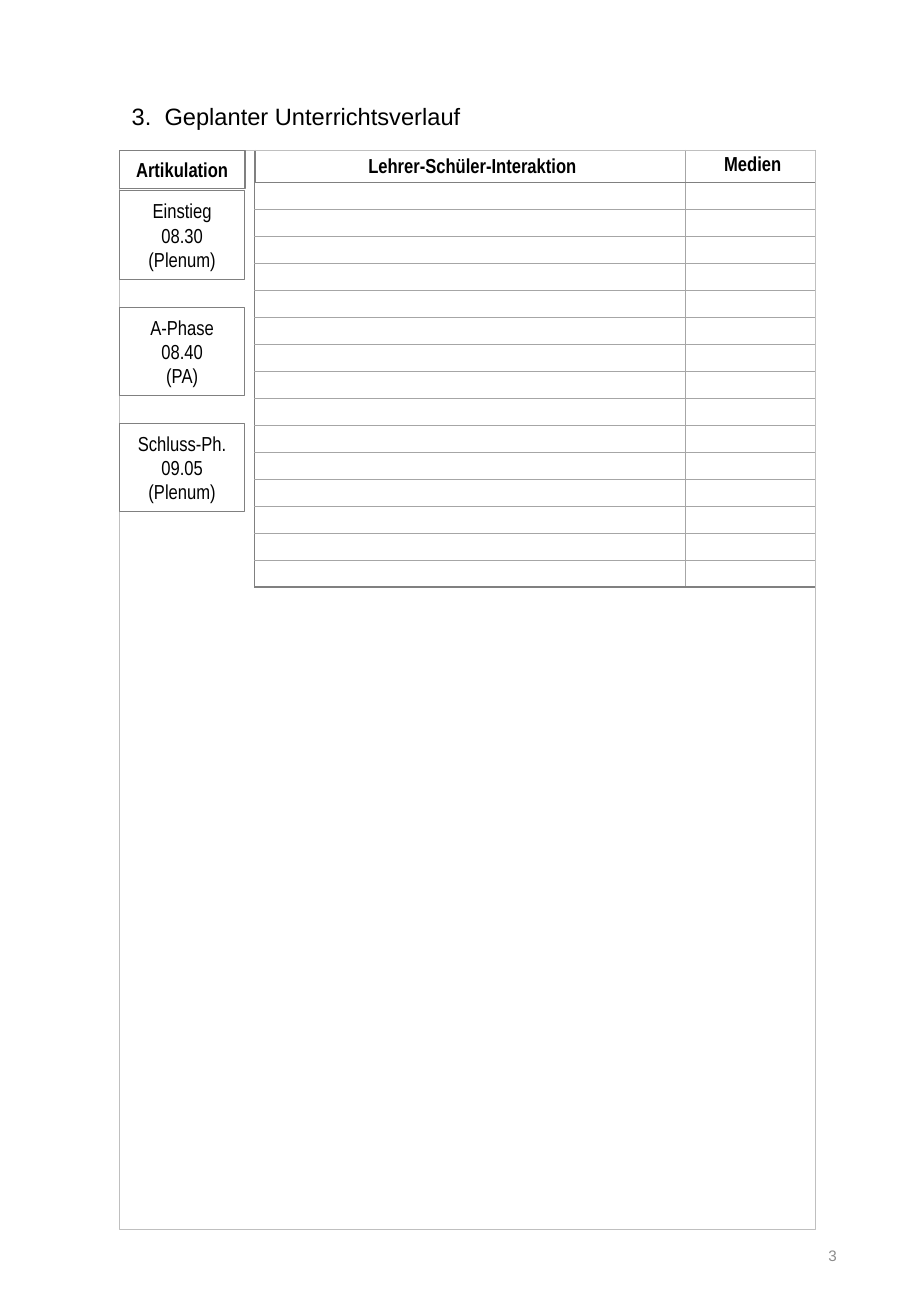
from dataclasses import dataclass

import pptx
import pptx.dml.color
import pptx.enum.shapes
import pptx.enum.text
import pptx.oxml
import pptx.oxml.ns
import pptx.util
from pptx.util import Cm

ALIGN = pptx.enum.text.PP_ALIGN
MIDDLE = pptx.enum.text.MSO_ANCHOR.MIDDLE
RECTANGLE = pptx.enum.shapes.MSO_SHAPE.RECTANGLE
rgb = pptx.dml.color.RGBColor.from_string


@dataclass(frozen=True)
class Theme:
    text: str = "000000"
    paper: str = "FFFFFF"
    page_number: str = "8C8C8C"
    dark_line: str = "808080"
    grid_line: str = "A6A6A6"
    frame_line: str = "BFBFBF"
    heading_font: str = "Arial"
    body_font: str = "Arial Narrow"
    heading_size: int = 14
    body_size: int = 12
    number_size: int = 9
    empty_size: int = 10


theme = Theme()


def write(frame, text, font=theme.body_font, size=theme.body_size, color=theme.text,
          bold=False, align=ALIGN.CENTER, spacing=None):
    """Fill a text frame with one paragraph per line of text."""
    frame.word_wrap = True
    for index, line in enumerate(text.split("\n")):
        paragraph = frame.add_paragraph() if index else frame.paragraphs[0]
        paragraph.alignment = align
        if spacing:
            paragraph.line_spacing = spacing
        if not line:
            end = paragraph._p.get_or_add_endParaRPr()
            end.set("sz", str(size * 100))
            continue
        run = paragraph.add_run()
        run.text = line
        run.font.name = font
        run.font.size = pptx.util.Pt(size)
        run.font.bold = bold
        run.font.color.rgb = rgb(color)


def set_border(cell, side, color, points):
    """Append one border; call in the order L, R, T, B and before the fill."""
    namespace = pptx.oxml.ns.nsdecls("a")
    cell._tc.get_or_add_tcPr().append(pptx.oxml.parse_xml(
        f'<a:ln{side} {namespace} w="{int(points * 12700)}"><a:solidFill>'
        f'<a:srgbClr val="{color}"/></a:solidFill></a:ln{side}>'))


presentation = pptx.Presentation()
presentation.slide_width = Cm(19.05)
presentation.slide_height = Cm(27.51)
slide = presentation.slides.add_slide(presentation.slide_layouts[5])

left, top, width = Cm(2.5), Cm(3.15), Cm(14.55)

# Heading and page number
heading = slide.shapes.title
heading.left, heading.top, heading.width, heading.height = left, Cm(2), width, Cm(0.86)
heading.text_frame.auto_size = pptx.enum.text.MSO_AUTO_SIZE.NONE
heading.text_frame.vertical_anchor = MIDDLE
write(heading.text_frame, "3.  Geplanter Unterrichtsverlauf", font=theme.heading_font,
      size=theme.heading_size, align=ALIGN.LEFT)

page_number = slide.shapes.add_textbox(Cm(13.46), Cm(25.5), Cm(4.29), Cm(1.47))
page_number.text_frame.vertical_anchor = MIDDLE
write(page_number.text_frame, "3", font=theme.heading_font, size=theme.number_size,
      color=theme.page_number, align=ALIGN.RIGHT)

# Lesson table: one header row above empty rows
headers = ["Lehrer-Schüler-Interaktion", "Medien"]
header_spacing = [1.15, None]
empty_rows = 15
header_height, row_height = Cm(0.66), Cm(8.47) // empty_rows
lesson_frame = slide.shapes.add_table(
    empty_rows + 1, len(headers), Cm(5.33), top, Cm(11.72),
    header_height + empty_rows * row_height)
lesson = lesson_frame.table
for column, column_width in zip(lesson.columns, (Cm(9), Cm(2.72))):
    column.width = column_width

for row_index, row in enumerate(lesson.rows):
    is_header, is_last = row_index == 0, row_index == empty_rows
    row.height = header_height if is_header else row_height
    outer = (theme.dark_line, 1 if is_header else 0.75)
    inner = (theme.grid_line, 0.5)
    header_rule = (theme.dark_line, 1)
    for column_index, cell in enumerate(row.cells):
        set_border(cell, "L", *(outer if column_index == 0 else inner))
        set_border(cell, "R", *(inner if column_index == 0 else outer))
        set_border(cell, "T", *(header_rule if row_index <= 1 else inner))
        set_border(cell, "B", *(header_rule if is_header else outer if is_last else inner))
        cell.fill.solid()
        cell.fill.fore_color.rgb = rgb(theme.paper)
        cell.vertical_anchor = MIDDLE
        cell.margin_left, cell.margin_right = Cm(0.1), 0
        cell.margin_top = cell.margin_bottom = Cm(0.02)
        if is_header:
            write(cell.text_frame, headers[column_index], bold=True,
                  spacing=header_spacing[column_index])
        else:
            write(cell.text_frame, "", size=theme.empty_size)

# Page frame
page_frame = slide.shapes.add_shape(RECTANGLE, left, top, width, Cm(22.56))
page_frame.shadow.inherit = False
page_frame.fill.background()
page_frame.line.color.rgb = rgb(theme.frame_line)
page_frame.line.width = pptx.util.Pt(0.5)

# Left column: its header, then the phases at equal steps
phases = ["Einstieg\n08.30\n(Plenum)", "A-Phase\n08.40\n(PA)", "Schluss-Ph.\n09.05\n(Plenum)"]
articulation = [("Artikulation", top, Cm(0.79), 1, True)]
for index, phase in enumerate(phases):
    articulation.append((phase, Cm(3.99) + index * Cm(2.43), Cm(1.85), 0.5, False))

for label, box_top, box_height, line_width, bold in articulation:
    box = slide.shapes.add_shape(RECTANGLE, left, box_top, Cm(2.62), box_height)
    box.shadow.inherit = False
    box.fill.solid()
    box.fill.fore_color.rgb = rgb(theme.paper)
    box.line.color.rgb = rgb(theme.dark_line)
    box.line.width = pptx.util.Pt(line_width)
    label_frame = box.text_frame
    label_frame.vertical_anchor = MIDDLE
    label_frame.margin_left = label_frame.margin_right = 0
    label_frame.margin_top = label_frame.margin_bottom = 0
    write(label_frame, label, bold=bold)

presentation.save("out.pptx")
